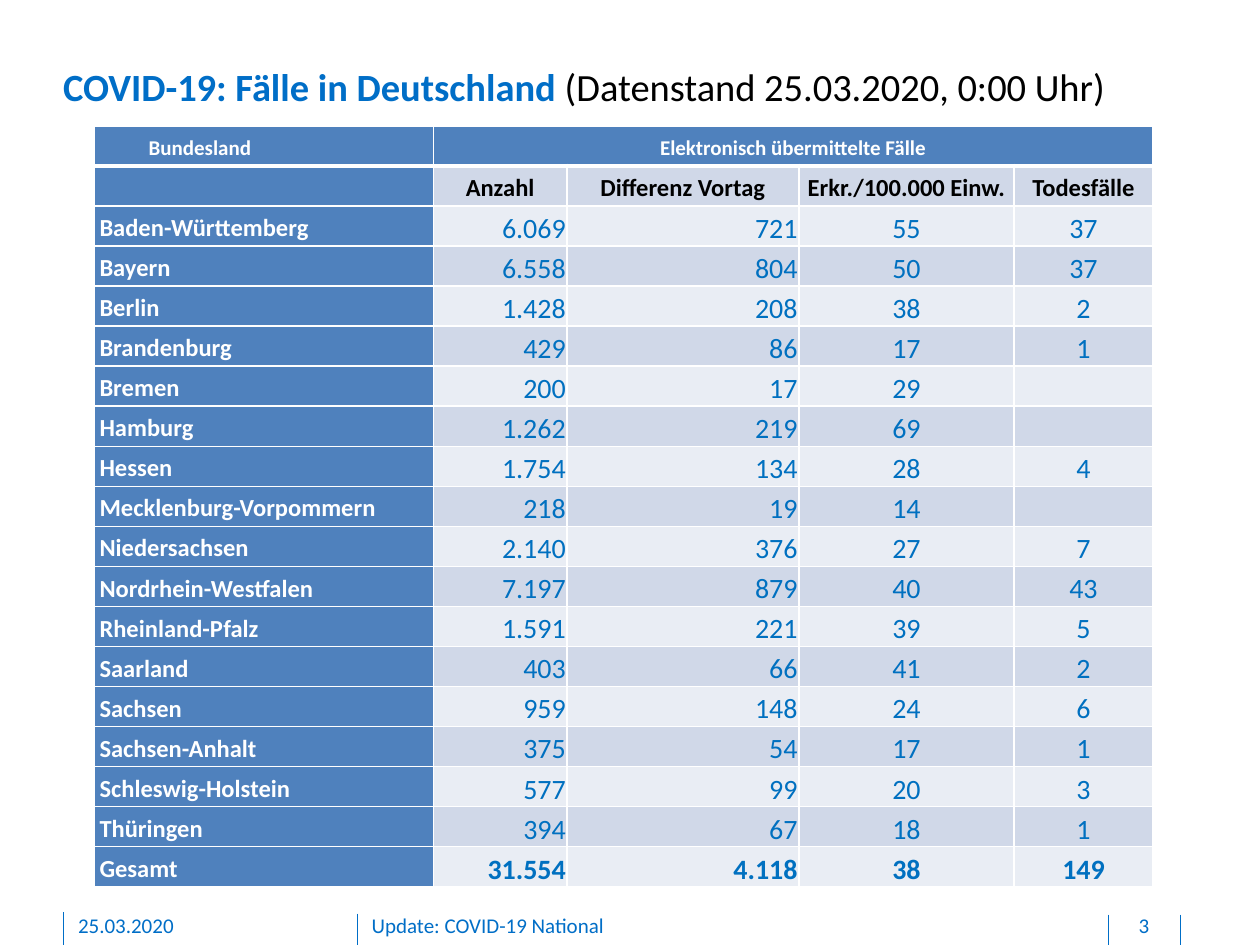
from lxml.etree import SubElement
from pptx import Presentation
from pptx.dml.color import RGBColor
from pptx.enum.shapes import MSO_CONNECTOR
from pptx.enum.text import MSO_ANCHOR as ANCHOR, MSO_AUTO_SIZE as AUTO_SIZE, PP_ALIGN as ALIGN
from pptx.oxml.ns import qn
from pptx.util import Inches, Pt

BLUE, NUMBER_BLUE = "006EC7", "0070C0"
HEADER, BAND_DARK, BAND_LIGHT = "4F81BD", "D0D8E8", "E9EDF4"
WHITE, BLACK = "FFFFFF", "000000"

COLUMN_WIDTHS = [2.69, 1.06, 1.84, 1.71, 1.1]
TABLE_HEIGHT = 6.04
COLUMN_TITLES = ["Anzahl", "Differenz Vortag", "Erkr./100.000 Einw.", "Todesfälle"]
CASES = [
    ("Baden-Württemberg", "6.069", "721", "55", "37"),
    ("Bayern", "6.558", "804", "50", "37"),
    ("Berlin", "1.428", "208", "38", "2"),
    ("Brandenburg", "429", "86", "17", "1"),
    ("Bremen", "200", "17", "29", ""),
    ("Hamburg", "1.262", "219", "69", ""),
    ("Hessen", "1.754", "134", "28", "4"),
    ("Mecklenburg-Vorpommern", "218", "19", "14", ""),
    ("Niedersachsen", "2.140", "376", "27", "7"),
    ("Nordrhein-Westfalen", "7.197", "879", "40", "43"),
    ("Rheinland-Pfalz", "1.591", "221", "39", "5"),
    ("Saarland", "403", "66", "41", "2"),
    ("Sachsen", "959", "148", "24", "6"),
    ("Sachsen-Anhalt", "375", "54", "17", "1"),
    ("Schleswig-Holstein", "577", "99", "20", "3"),
    ("Thüringen", "394", "67", "18", "1"),
    ("Gesamt", "31.554", "4.118", "38", "149"),
]


def rgb(value):
    return RGBColor.from_string(value)


class SlideBuilder:
    def __init__(self, slide, font="Calibri"):
        self.slide = slide
        self.font = font

    def run(self, paragraph, text, size, color, bold=False):
        run = paragraph.add_run()
        run.text = text
        run.font.name = self.font
        run.font.size = Pt(size)
        run.font.bold = bold
        run.font.color.rgb = rgb(color)

    def text(self, left, top, width, height, runs, align=ALIGN.LEFT, bottom=0.0, grow=False):
        """Add a text box; each run is (text, size, color, bold)."""
        box = self.slide.shapes.add_textbox(
            Inches(left), Inches(top), Inches(width), Inches(height))
        frame = box.text_frame
        frame.word_wrap = True
        frame.auto_size = AUTO_SIZE.SHAPE_TO_FIT_TEXT if grow else AUTO_SIZE.NONE
        frame.margin_left = frame.margin_right = frame.margin_top = 0
        frame.margin_bottom = Inches(bottom)
        paragraph = frame.paragraphs[0]
        paragraph.alignment = align
        for run in runs:
            self.run(paragraph, *run)

    def divider(self, x, top):
        """Add a vertical footer line down to the slide's lower edge."""
        line = self.slide.shapes.add_connector(
            MSO_CONNECTOR.STRAIGHT, Inches(x), Inches(top), Inches(x), Inches(7.5))
        line.line.color.rgb = rgb(BLUE)
        line.line.width = Pt(0.5)
        SubElement(line._element.spPr, qn("a:effectLst"))

    def table(self, left, top, widths, height, row_count):
        frame = self.slide.shapes.add_table(
            row_count, len(widths), Inches(left), Inches(top),
            Inches(sum(widths)), Inches(height))
        table = frame.table
        for column, width in zip(table.columns, widths):
            column.width = Inches(width)
        for row in table.rows:
            row.height = Inches(height / row_count)
        return table

    def borders(self, cell, top=1, bottom=1):
        properties = cell._tc.get_or_add_tcPr()
        for side, width in (("L", 1), ("R", 1), ("T", top), ("B", bottom)):
            line = SubElement(properties, qn(f"a:ln{side}"), w=str(Pt(width)))
            fill = SubElement(line, qn("a:solidFill"))
            SubElement(fill, qn("a:srgbClr"), val=WHITE)

    def cell(self, cell, text, fill, size, color, bold=True, align=ALIGN.LEFT,
             number=False, top=1, bottom=1, indent=0.0):
        self.borders(cell, top, bottom)
        cell.fill.solid()
        cell.fill.fore_color.rgb = rgb(fill)
        cell.vertical_anchor = ANCHOR.BOTTOM if number else ANCHOR.MIDDLE
        cell.margin_left = cell.margin_right = Inches(0.01 if number else 0.04)
        cell.margin_top = Inches(0.01 if number else 0)
        cell.margin_bottom = 0
        paragraph = cell.text_frame.paragraphs[0]
        paragraph.alignment = align
        if not number:
            paragraph.line_spacing = 1.15
        if indent:
            paragraph._p.get_or_add_pPr().set("indent", str(Inches(indent)))
        if text:
            self.run(paragraph, text, size, color, bold)
        else:
            paragraph.font.size = Pt(size)


def add_case_table(builder):
    table = builder.table(0.75, 1, COLUMN_WIDTHS, TABLE_HEIGHT, len(CASES) + 2)
    group_titles = ["Bundesland", "Elektronisch übermittelte Fälle", "", "", ""]
    for column, title in enumerate(group_titles):
        builder.cell(table.cell(0, column), title, HEADER, 12, WHITE, bottom=3,
                     align=ALIGN.CENTER if column else ALIGN.LEFT,
                     indent=0 if column else 0.39)
    table.cell(0, 1).merge(table.cell(0, 4))

    for column, title in enumerate([""] + COLUMN_TITLES):
        builder.cell(table.cell(1, column), title, BAND_DARK if column else HEADER,
                     14, BLACK, align=ALIGN.CENTER, top=3)

    for row, (state, *numbers) in enumerate(CASES, start=2):
        builder.cell(table.cell(row, 0), state, HEADER, 14, WHITE)
        band = BAND_DARK if row % 2 else BAND_LIGHT
        for column, number in enumerate(numbers, start=1):
            builder.cell(table.cell(row, column), number, band, 16, NUMBER_BLUE,
                         bold=state == "Gesamt", number=True,
                         align=ALIGN.RIGHT if column <= 2 else ALIGN.CENTER)


def main():
    presentation = Presentation()
    presentation.slide_width = Inches(10)
    presentation.slide_height = Inches(7.5)
    builder = SlideBuilder(presentation.slides.add_slide(presentation.slide_layouts[6]))

    for x, top in ((2.84, 7.25), (0.5, 7.24), (9.37, 7.26), (8.8, 7.26)):
        builder.divider(x, top)
    builder.text(0.5, 0.5, 8.85, 0.37, [
        ("COVID-19: Fälle in Deutschland ", 22, BLUE, True),
        ("(Datenstand 25.03.2020, 0:00 Uhr)", 22, BLACK, False),
    ], grow=True)
    add_case_table(builder)
    for left, width, text, align in (
        (0.62, 2.03, "25.03.2020", ALIGN.LEFT),
        (2.95, 5.67, "Update: COVID-19 National", ALIGN.LEFT),
        (8.81, 0.54, "3", ALIGN.CENTER),
    ):
        builder.text(left, 7.24, width, 0.21, [(text, 12, BLUE)], align, bottom=0.05)

    presentation.save("out.pptx")


if __name__ == "__main__":
    main()
